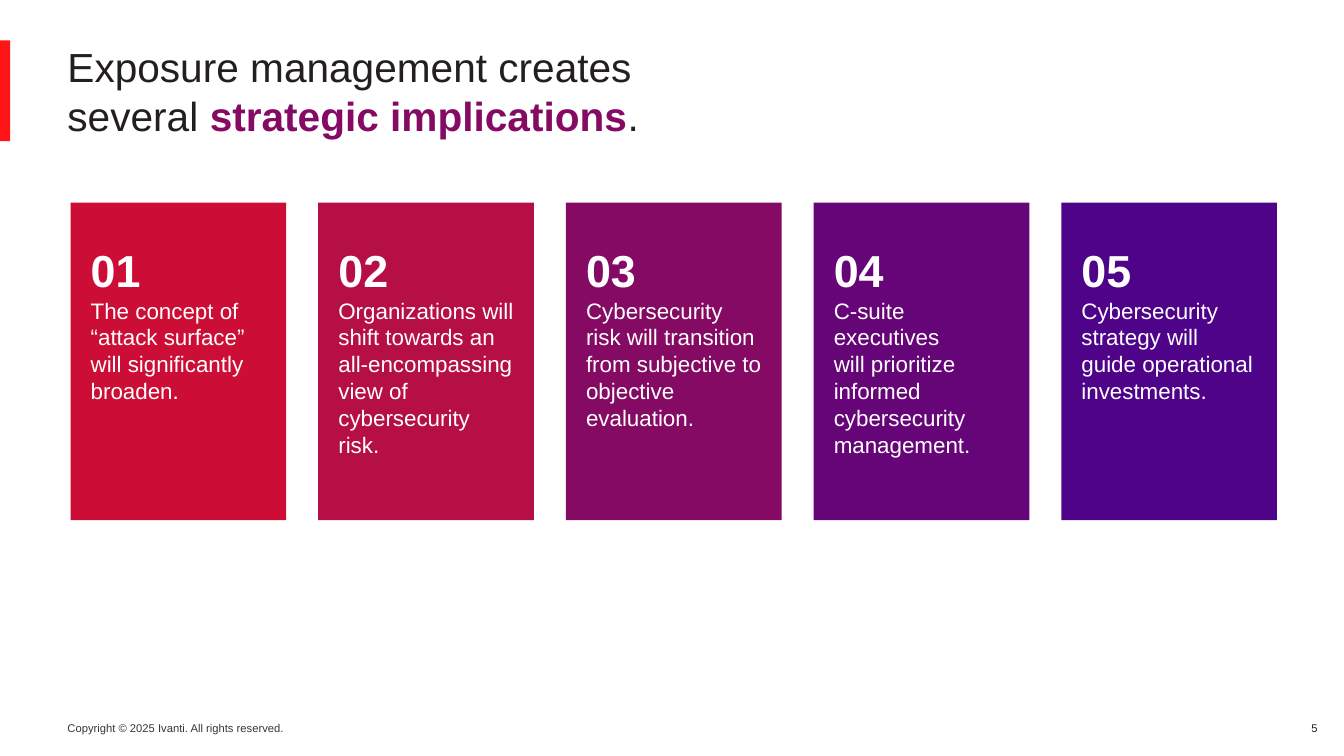
import pptx
import pptx.util
import pptx.dml.color
import pptx.enum.shapes
import pptx.enum.text

Pt = pptx.util.Pt
ALIGN = pptx.enum.text.PP_ALIGN
ANCHOR = pptx.enum.text.MSO_ANCHOR

INK = "231F20"
PLUM = "850A64"
WHITE = "FFFFFF"

CARDS = [
    ("CC0E36", "The concept of “attack surface” will significantly broaden."),
    ("B60F45", "Organizations will shift towards an all-encompassing view of cybersecurity risk."),
    (PLUM, "Cybersecurity risk will transition from subjective to objective evaluation."),
    ("660578", "C-suite executives \nwill prioritize informed cybersecurity management."),
    ("4E0389", "Cybersecurity strategy will guide operational investments."),
]


def rgb(color):
    return pptx.dml.color.RGBColor.from_string(color)


def add_text(para, text, size, color, bold=False):
    for index, line in enumerate(text.split("\n")):
        if index:
            para.add_line_break()
        span = para.add_run()
        span.text = line
        span.font.name = "Arial"
        span.font.size = Pt(size)
        span.font.bold = bold
        span.font.color.rgb = rgb(color)


def set_frame(box, insets, anchor=ANCHOR.TOP, wrap=True):
    frame = box.text_frame
    frame.word_wrap = wrap
    frame.vertical_anchor = anchor
    frame.margin_left, frame.margin_top, frame.margin_right, frame.margin_bottom = map(Pt, insets)
    return frame


def add_block(page, left, top, width, height, color):
    block = page.shapes.add_shape(
        pptx.enum.shapes.MSO_SHAPE.RECTANGLE, Pt(left), Pt(top), Pt(width), Pt(height))
    block.shadow.inherit = False
    block.fill.solid()
    block.fill.fore_color.rgb = rgb(color)
    block.line.fill.background()
    return block


def add_title(page, left, top, width, height):
    box = page.shapes.add_textbox(Pt(left), Pt(top), Pt(width), Pt(height))
    para = set_frame(box, (0, 0, 7.2, 0), anchor=ANCHOR.MIDDLE).paragraphs[0]
    add_text(para, "Exposure management creates\nseveral ", 29, INK)
    add_text(para, "strategic implications", 29, PLUM, bold=True)
    add_text(para, ".", 29, INK)


def add_cards(page, left, top, width, height, card_width):
    step = (width - card_width) / (len(CARDS) - 1)
    for index, (color, text) in enumerate(CARDS):
        card = add_block(page, left + index * step, top, card_width, height, color)
        frame = set_frame(card, (14.4, 28.8, 14.4, 7.2))
        number, body = frame.paragraphs[0], frame.add_paragraph()
        number.alignment = body.alignment = ALIGN.LEFT
        add_text(number, f"{index + 1:02}", 32, WHITE, bold=True)
        add_text(body, text, 16, WHITE)


def add_footer(page, left, top, width, height):
    number_width = 34.5
    parts = [
        (left, 164, "Copyright © 2025 Ivanti. All rights reserved.", "3B3436", ALIGN.LEFT),
        (left + width - number_width, number_width, "5", INK, ALIGN.RIGHT),
    ]
    for part_left, part_width, text, color, alignment in parts:
        box = page.shapes.add_textbox(Pt(part_left), Pt(top), Pt(part_width), Pt(height))
        para = set_frame(box, (0, 3.6, 7.2, 3.6), wrap=False).paragraphs[0]
        para.alignment = alignment
        add_text(para, text, 8, color)


def main():
    deck = pptx.Presentation()
    deck.slide_width, deck.slide_height = Pt(960), Pt(540)
    page = deck.slides.add_slide(deck.slide_layouts[6])
    add_block(page, 0, 28.8, 7.2, 72, "FF1515")
    add_title(page, 48.2, 42.5, 911.8, 44.6)
    add_cards(page, 50.4, 144.7, 861.8, 226.8, card_width=154.1)
    add_footer(page, 48.2, 511.9, 900, 17.3)
    deck.save("out.pptx")


if __name__ == "__main__":
    main()
